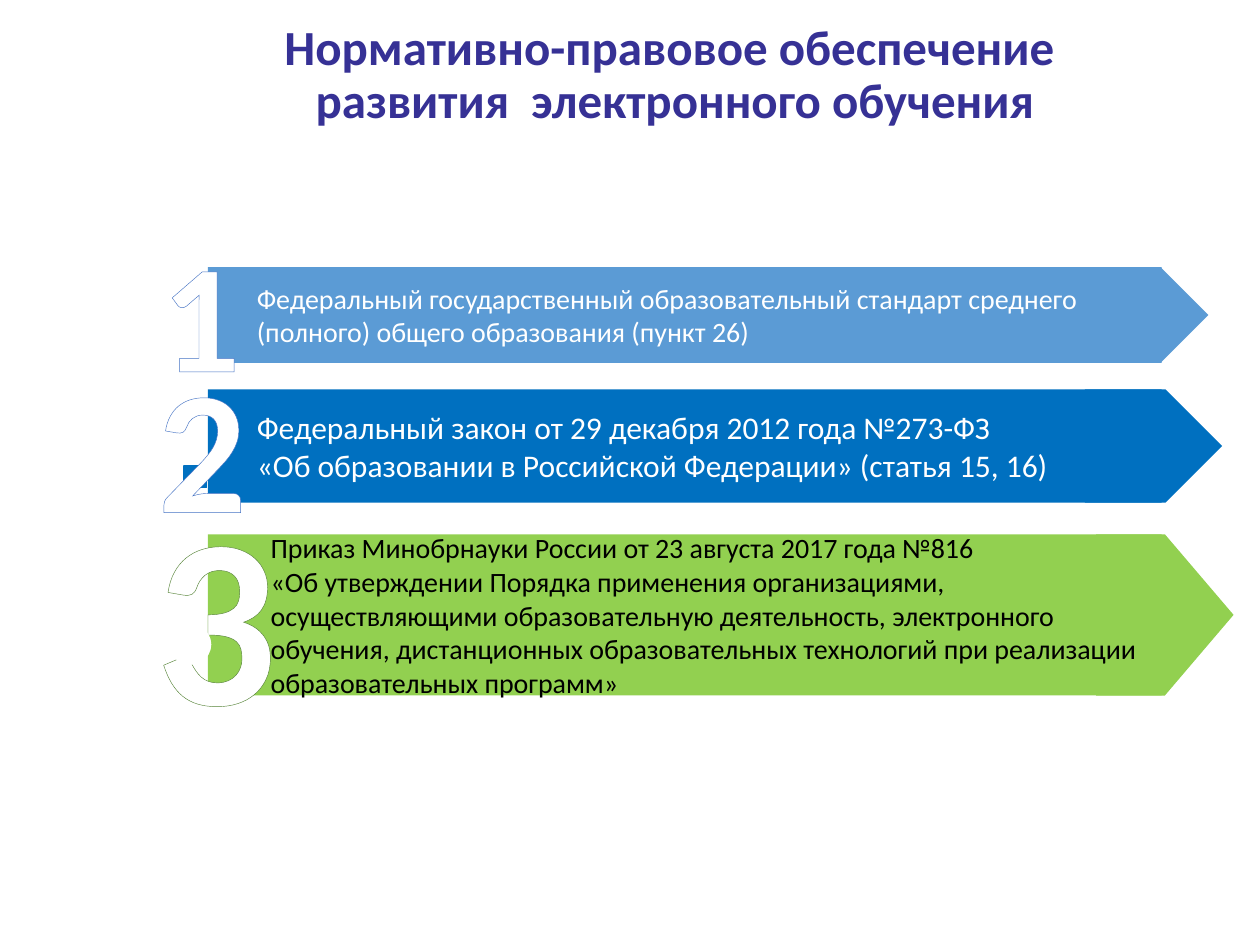
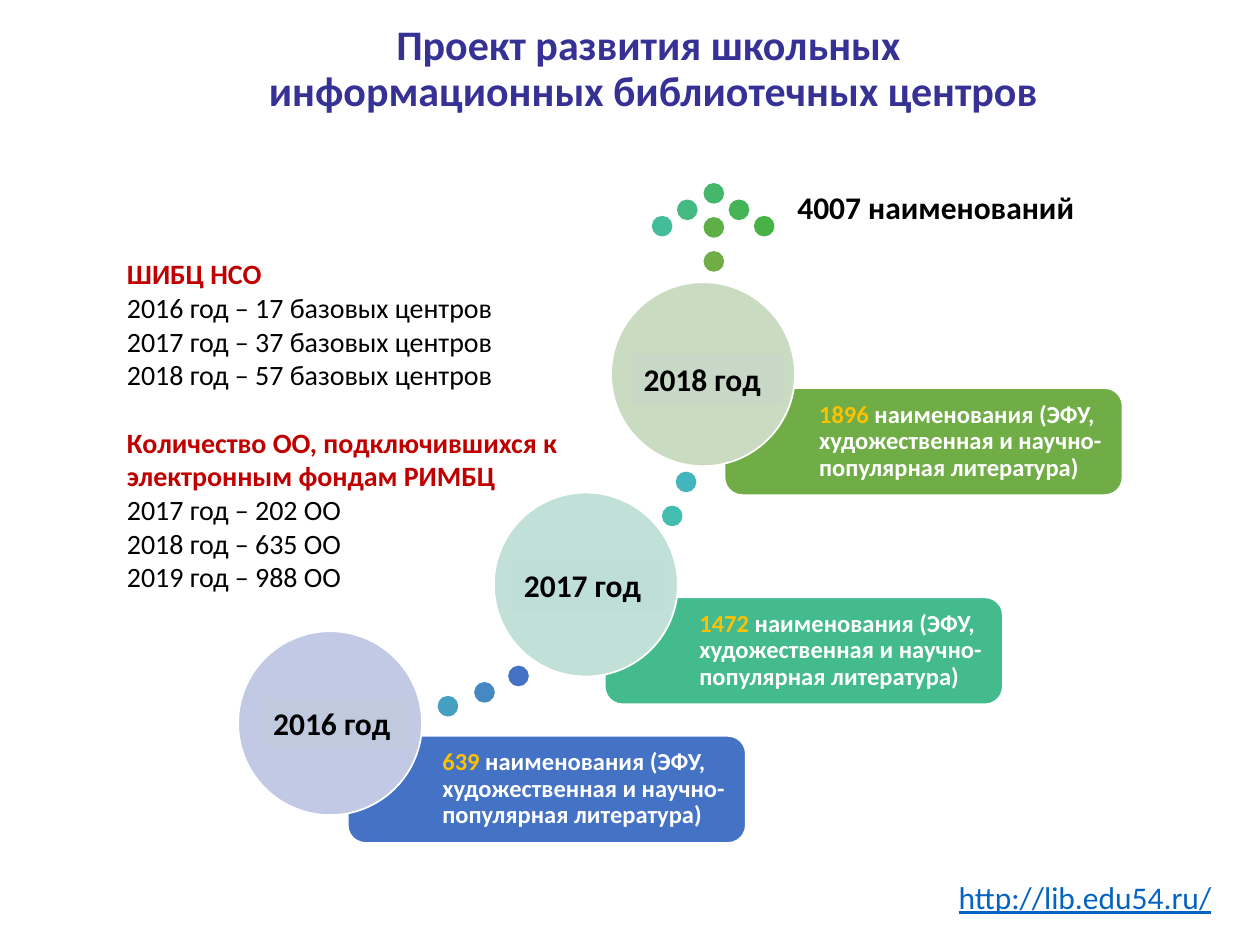
from dataclasses import dataclass

from lxml import etree
from pptx import Presentation
from pptx.dml.color import RGBColor
from pptx.enum import shapes, text
from pptx.oxml.ns import qn
from pptx.util import Inches, Pt

FONT = "Calibri"
TITLE_BLUE = RGBColor(0x36, 0x31, 0x95)
WHITE = RGBColor(0xFF, 0xFF, 0xFF)
BLACK = RGBColor(0x00, 0x00, 0x00)
RED = RGBColor(0xC0, 0x00, 0x00)
GOLD = RGBColor(0xFF, 0xC0, 0x00)
LINK_BLUE = RGBColor(0x05, 0x63, 0xC1)
SKY = RGBColor(0x5B, 0x9B, 0xD5)
BLUE = RGBColor(0x00, 0x70, 0xC0)
LIME = RGBColor(0x92, 0xD0, 0x50)
INDIGO = RGBColor(0x44, 0x72, 0xC4)
TEAL = RGBColor(0x43, 0xBB, 0x8D)
GREEN = RGBColor(0x70, 0xAD, 0x47)
DARK_GREEN = RGBColor(0x54, 0x82, 0x35)

SHAPE = shapes.MSO_SHAPE
ALIGN = text.PP_ALIGN
ANCHOR = text.MSO_ANCHOR


@dataclass
class ArrowRow:
    top: float
    height: float
    tip_left: float
    color: RGBColor
    ink: RGBColor
    size: int
    indent: float
    wording: str


@dataclass
class Numeral:
    digit: str
    left: float
    top: float
    height: float
    size: int
    outline: RGBColor


@dataclass
class YearStage:
    label_left: float
    label_top: float
    color: RGBColor
    circle_left: float
    circle_top: float
    circle_color: RGBColor
    year: str
    year_left: float
    year_top: float
    year_color: RGBColor
    count: str


@dataclass
class Dot:
    left: float
    top: float
    color: str


@dataclass
class ListLine:
    wording: str
    heading: bool = False
    gap: float = 0


ROWS = [
    ArrowRow(2.12, 0.76, 8.5, SKY, WHITE, 16, 0.29,
             "Федеральный государственный образовательный стандарт среднего "
             "(полного) общего образования (пункт 26)"),
    ArrowRow(3.09, 0.9, 8.61, BLUE, WHITE, 18, 0.29,
             "Федеральный закон от 29 декабря 2012 года №273-ФЗ \n"
             "«Об образовании в Российской Федерации» (статья 15, 16)"),
    ArrowRow(4.24, 1.28, 8.7, LIME, BLACK, 16, 0.4,
             "Приказ Минобрнауки России от 23 августа 2017 года №816 \n"
             "«Об утверждении Порядка применения организациями, осуществляющими "
             "образовательную деятельность, электронного обучения, дистанционных "
             "образовательных технологий при реализации образовательных программ»"),
]

NUMERALS = [
    Numeral("3", 1.13, 3.63, 2.42, 138, DARK_GREEN),
    Numeral("1", 1.13, 1.68, 1.58, 88, INDIGO),
    Numeral("2", 1.14, 2.63, 1.78, 100, INDIGO),
]

STAGES = [
    YearStage(2.76, 5.84, INDIGO, 1.89, 5.01, RGBColor(0xC1, 0xC9, 0xE4),
              "2016 год", 2.07, 5.54, RGBColor(0xBF, 0xCA, 0xDF), "639"),
    YearStage(4.8, 4.74, TEAL, 3.92, 3.91, RGBColor(0xC1, 0xE0, 0xD7),
              "2017 год", 4.06, 4.44, RGBColor(0xC0, 0xDE, 0xD8), "1472"),
    YearStage(5.75, 3.08, GREEN, 4.85, 2.24, RGBColor(0xC9, 0xDB, 0xC1),
              "2018 год", 5.01, 2.81, RGBColor(0xC7, 0xD8, 0xC6), "1896"),
]

DOTS = [
    Dot(4.04, 5.29, "4472C4"), Dot(3.77, 5.42, "4489C2"), Dot(3.48, 5.53, "449FC1"),
    Dot(5.37, 3.75, "43B5BF"), Dot(5.26, 4.02, "43BEB1"),
    Dot(5.18, 1.72, "43BC99"), Dot(5.38, 1.59, "44B982"), Dot(5.59, 1.46, "44B76B"),
    Dot(5.79, 1.59, "45B456"), Dot(5.99, 1.72, "49B246"),
    Dot(5.59, 1.73, "5DAF46"), Dot(5.59, 2, "70AD47"),
]

CENTER_LINES = [
    ListLine("ШИБЦ НСО", heading=True),
    ListLine("2016 год – 17 базовых центров"),
    ListLine("2017 год – 37 базовых центров"),
    ListLine("2018 год – 57 базовых центров"),
    ListLine("Количество ОО, подключившихся к электронным фондам РИМБЦ",
             heading=True, gap=19.5),
    ListLine("2017 год – 202 ОО"),
    ListLine("2018 год – 635 ОО"),
    ListLine("2019 год – 988 ОО"),
]


def style(span, size: float, color: RGBColor, bold: bool = False) -> None:
    span.font.name = FONT
    span.font.size = Pt(size)
    span.font.bold = bold
    span.font.color.rgb = color


def write(para, wording: str, size: float, color: RGBColor, bold: bool = False) -> None:
    """Fill a paragraph; a newline becomes a line break."""
    para.text = wording
    for span in para.runs:
        style(span, size, color, bold)


def add_title_page(deck, wording: str, left: float, top: float, size: float):
    page = deck.slides.add_slide(deck.slide_layouts[5])
    title = page.shapes.title
    title.left, title.top = Inches(left), Inches(top)
    title.width, title.height = Inches(8.01), Inches(1.01)
    frame = title.text_frame
    frame.auto_size = text.MSO_AUTO_SIZE.NONE
    frame.vertical_anchor = ANCHOR.MIDDLE
    para = frame.paragraphs[0]
    write(para, wording, size, TITLE_BLUE, True)
    para.alignment = ALIGN.CENTER
    para.line_spacing = 0.9
    return page


def add_block(page, kind, left: float, top: float, width: float, height: float,
              fill: RGBColor, line: RGBColor | None = None):
    box = page.shapes.add_shape(kind, Inches(left), Inches(top),
                                Inches(width), Inches(height))
    box.shadow.inherit = False
    box.fill.solid()
    box.fill.fore_color.rgb = fill
    if line is None:
        box.line.fill.background()
    else:
        box.line.color.rgb = line
        box.line.width = Pt(1)
    box.text_frame.word_wrap = True
    box.text_frame.paragraphs[0].alignment = ALIGN.LEFT
    return box


def add_text(page, left: float, top: float, width: float, height: float):
    box = page.shapes.add_textbox(Inches(left), Inches(top),
                                  Inches(width), Inches(height))
    box.text_frame.word_wrap = True
    return box.text_frame


def add_arrow_row(page, row: ArrowRow) -> None:
    add_block(page, SHAPE.PENTAGON, row.tip_left, row.top, 1.09, row.height, row.color)
    bar = add_block(page, SHAPE.RECTANGLE, 1.65, row.top, 7.57, row.height, row.color)
    bar.text_frame.vertical_anchor = ANCHOR.MIDDLE
    para = bar.text_frame.paragraphs[0]
    write(para, row.wording, row.size, row.ink)
    para._p.get_or_add_pPr().set("marL", str(Inches(row.indent)))


def add_numeral(page, numeral: Numeral) -> None:
    frame = add_text(page, numeral.left, numeral.top, 0.93, numeral.height)
    para = frame.paragraphs[0]
    write(para, numeral.digit, numeral.size, WHITE, True)
    para.alignment = ALIGN.CENTER
    # Letter outline
    outline = etree.Element(qn("a:ln"), w=str(Pt(0.8)))
    fill = etree.SubElement(outline, qn("a:solidFill"))
    etree.SubElement(fill, qn("a:srgbClr"), val=str(numeral.outline))
    para.runs[0]._r.get_or_add_rPr().insert(0, outline)


def add_stage(page, stage: YearStage) -> None:
    label = add_block(page, SHAPE.ROUNDED_RECTANGLE, stage.label_left, stage.label_top,
                      3.16, 0.85, stage.color, WHITE)
    frame = label.text_frame
    frame.vertical_anchor = ANCHOR.MIDDLE
    frame.margin_left = Inches(0.71)
    frame.margin_right = frame.margin_top = frame.margin_bottom = Inches(0.1)
    para = frame.paragraphs[0]
    para.line_spacing = 0.9
    write(para, stage.count, 14, GOLD, True)
    span = para.add_run()
    span.text = " наименования (ЭФУ, художественная и научно-популярная литература)"
    style(span, 14, WHITE, True)
    add_block(page, SHAPE.OVAL, stage.circle_left, stage.circle_top, 1.46, 1.46,
              stage.circle_color, WHITE)
    year = add_block(page, SHAPE.RECTANGLE, stage.year_left, stage.year_top, 1.2, 0.4,
                     stage.year_color)
    year.text_frame.vertical_anchor = ANCHOR.TOP
    write(year.text_frame.paragraphs[0], stage.year, 18, BLACK, True)


def build_law_page(deck) -> None:
    page = add_title_page(deck, "Нормативно-правовое обеспечение \n"
                                "развития  электронного обучения", 1.35, 0.1, 28)
    for row in ROWS:
        add_arrow_row(page, row)
    # Patches that tidy the bar edges around the numerals
    add_block(page, SHAPE.RECTANGLE, 1.46, 3.7, 0.18, 0.17, BLUE, BLUE)
    for numeral in NUMERALS:
        add_numeral(page, numeral)
    add_block(page, SHAPE.OVAL, 1.35, 4.96, 0.32, 0.31, WHITE, WHITE)


def build_library_page(deck) -> None:
    page = add_title_page(deck, "Проект развития школьных \n"
                                "информационных библиотечных центров", 1.18, 0.05, 24)
    # Dotted path, then the stages along it
    for dot in DOTS:
        color = RGBColor.from_string(dot.color)
        add_block(page, SHAPE.OVAL, dot.left, dot.top, 0.15, 0.15, color, color)
    for stage in STAGES:
        add_stage(page, stage)

    # Figures on the left
    frame = add_text(page, 0.91, 1.99, 3.76, 3.87)
    for index, line in enumerate(CENTER_LINES):
        para = frame.add_paragraph() if index else frame.paragraphs[0]
        write(para, line.wording, 16, RED if line.heading else BLACK, line.heading)
        if line.gap:
            para.space_before = Pt(line.gap)

    # Web address and total
    address = add_text(page, 7.51, 6.92, 2.4, 0.4).paragraphs[0]
    write(address, "http://lib.edu54.ru/", 18, LINK_BLUE)
    address.runs[0].font.underline = True
    total = add_text(page, 6.23, 1.44, 2.64, 0.4).paragraphs[0]
    write(total, "4007 наименований", 18, BLACK, True)


def main() -> None:
    deck = Presentation()
    deck.slide_width, deck.slide_height = Inches(10), Inches(7.5)
    build_law_page(deck)
    build_library_page(deck)
    deck.save("out.pptx")


if __name__ == "__main__":
    main()
